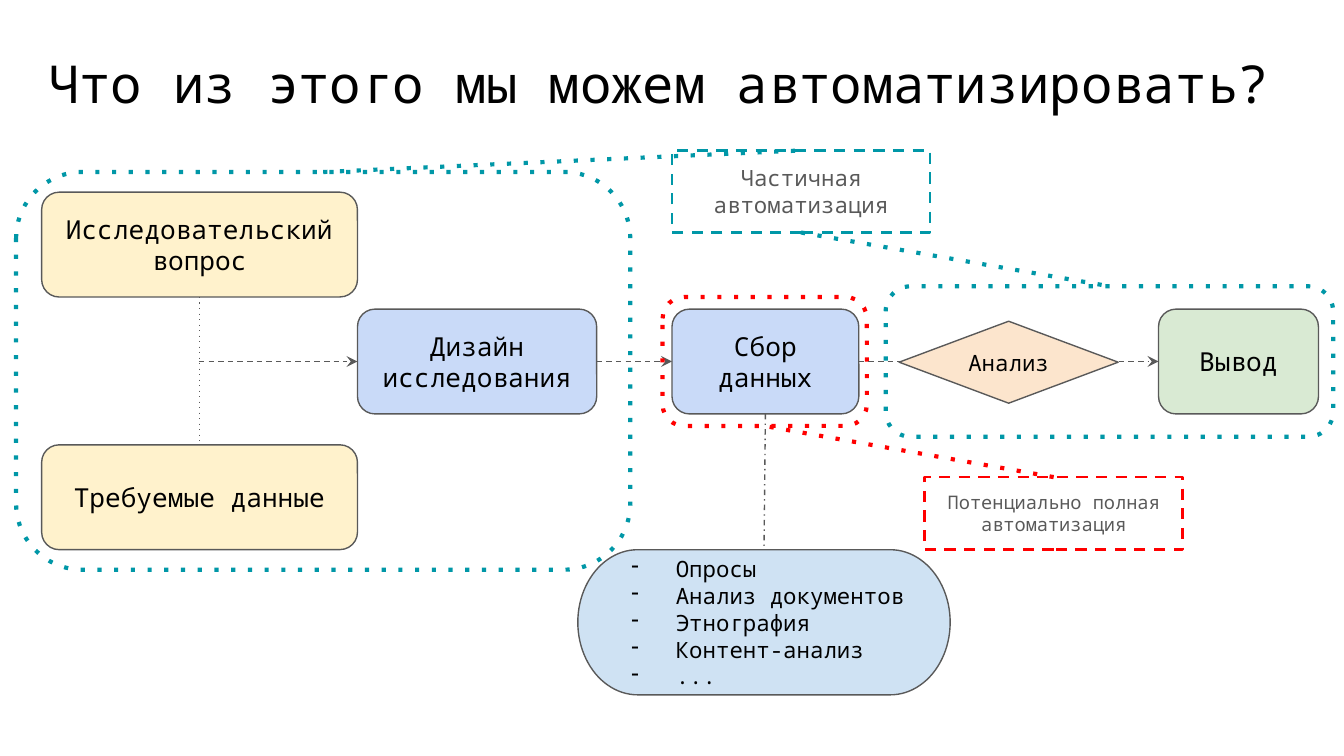
from lxml import etree
from pptx import Presentation
from pptx.dml.color import RGBColor
from pptx.enum.shapes import MSO_CONNECTOR, MSO_SHAPE
from pptx.enum.text import MSO_ANCHOR, MSO_AUTO_SIZE, PP_ALIGN
from pptx.oxml.ns import qn
from pptx.util import Inches, Pt

FONT = "Noto Sans Mono"
BLACK = RGBColor(0x00, 0x00, 0x00)
GRAY = RGBColor(0x59, 0x59, 0x59)
TEAL = RGBColor(0x00, 0x97, 0xA7)
RED = RGBColor(0xFF, 0x00, 0x00)
CREAM = RGBColor(0xFF, 0xF2, 0xCC)
BLUE = RGBColor(0xC9, 0xDA, 0xF8)
SKY = RGBColor(0xCF, 0xE2, 0xF3)
PEACH = RGBColor(0xFC, 0xE5, 0xCD)
GREEN = RGBColor(0xD9, 0xEA, 0xD3)

ROUND = MSO_SHAPE.ROUNDED_RECTANGLE
RECT = MSO_SHAPE.RECTANGLE
DIAMOND = MSO_SHAPE.FLOWCHART_DECISION
PILL = MSO_SHAPE.FLOWCHART_TERMINATOR
STRAIGHT = MSO_CONNECTOR.STRAIGHT
LEFT, CENTER = PP_ALIGN.LEFT, PP_ALIGN.CENTER
TOP, MIDDLE = MSO_ANCHOR.TOP, MSO_ANCHOR.MIDDLE
GROW = MSO_AUTO_SIZE.SHAPE_TO_FIT_TEXT

NORTH, WEST, SOUTH, EAST = range(4)
TALL = 0.78


def write(shape, lines, size, color=BLACK, align=CENTER, anchor=MIDDLE):
    frame = shape.text_frame
    frame.word_wrap = True
    frame.vertical_anchor = anchor
    frame.margin_left = frame.margin_right = Inches(0.1)
    frame.margin_top = frame.margin_bottom = Inches(0.1)
    frame.text = "\n".join(lines)
    for para in frame.paragraphs:
        para.alignment = align
        para.font.name = FONT
        para.font.size = Pt(size)
        para.font.color.rgb = color


def stroke(shape, color, width, dash=None, arrow=False):
    shape.line.color.rgb = color
    shape.line.width = Pt(width)
    ln = shape.element.spPr.find(qn("a:ln"))
    if dash:
        etree.SubElement(ln, qn("a:prstDash"), val=dash)
    if arrow:
        etree.SubElement(ln, qn("a:tailEnd"), type="stealth")


def block(slide, kind, box, fill=None, color=GRAY, width=0.75, dash=None):
    shape = slide.shapes.add_shape(kind, *map(Inches, box))
    shape.shadow.inherit = False
    if fill is None:
        shape.fill.background()
    else:
        shape.fill.solid()
        shape.fill.fore_color.rgb = fill
    stroke(shape, color, width, dash)
    return shape


def node(slide, kind, box, fill, text, size=14):
    shape = block(slide, kind, box, fill)
    write(shape, [text], size)
    return shape


def link(slide, start, end, color=GRAY, width=0.75, dash="dash", arrow=False):
    line = slide.shapes.add_connector(STRAIGHT, 0, 0, 0, 0)
    if isinstance(start[0], float):
        line.begin_x, line.begin_y = map(Inches, start)
    else:
        line.begin_connect(*start)
    line.end_connect(*end)
    stroke(line, color, width, dash, arrow)
    etree.SubElement(line.element.spPr, qn("a:effectLst"))


def zone(slide, box, color):
    return block(slide, ROUND, box, None, color, 2.25, "dot")


def label(slide, box, text, size, color):
    shape = block(slide, RECT, box, None, color, 1.5, "dash")
    write(shape, [text], size, GRAY, anchor=TOP)
    shape.text_frame.auto_size = GROW
    return shape


def title(slide, box):
    text = slide.shapes.add_textbox(*map(Inches, box))
    write(text, ["Что из этого мы можем автоматизировать?"], 28, align=LEFT, anchor=TOP)
    text.text_frame.auto_size = GROW


def plan(slide, box):
    x, y, w, h = box
    ask = node(slide, ROUND, (x + 0.19, y + 0.15, 2.35, TALL), CREAM,
               "Исследовательский вопрос")
    need = node(slide, ROUND, (x + 0.19, y + 2.03, 2.35, TALL), CREAM,
                "Требуемые данные")
    design = node(slide, ROUND, (x + 2.54, y + 1.02, 1.78, TALL), BLUE,
                  "Дизайн исследования")
    link(slide, (ask, SOUTH), (need, NORTH), dash="dot")
    link(slide, (x + 1.36, y + 1.41), (design, WEST), arrow=True)
    return design, zone(slide, box, TEAL)


def collect(slide, box, design):
    x, y, w, h = box
    data = node(slide, ROUND, (x + 0.07, y + 0.09, 1.39, TALL), BLUE, "Сбор данных")
    link(slide, (design, EAST), (data, WEST), arrow=True)
    return data, zone(slide, box, RED)


def methods(slide, box, data):
    pill = block(slide, PILL, box, SKY)
    write(pill, ["Опросы", "Анализ документов", "Этнография", "Контент-анализ", "..."],
          12, align=LEFT)
    for para in pill.text_frame.paragraphs:
        props = para._p.get_or_add_pPr()
        props.set("marL", str(Inches(0.5)))
        props.set("indent", str(Inches(-0.33)))
        tint = etree.Element(qn("a:buClr"))
        etree.SubElement(tint, qn("a:srgbClr"), val=str(BLACK))
        mark = etree.Element(qn("a:buChar"), char="-")
        props.insert(0, tint)
        props.insert(1, mark)
    link(slide, (data, SOUTH), (pill, NORTH), dash="dashDot")


def result(slide, box, data):
    x, y, w, h = box
    end = node(slide, ROUND, (x + 2.03, y + 0.17, 1.19, TALL), GREEN, "Вывод")
    link(slide, (data, EAST), (end, WEST), arrow=True)
    node(slide, DIAMOND, (x + 0.1, y + 0.26, 1.63, 0.61), PEACH, "Анализ", 12)
    return zone(slide, box, TEAL)


def main():
    prs = Presentation()
    prs.slide_width = Inches(10)
    prs.slide_height = prs.slide_width * 9 // 16
    slide = prs.slides.add_slide(prs.slide_layouts[6])

    title(slide, (0.26, 0.28, 9.74, 0.67))
    design, early = plan(slide, (0.12, 1.28, 4.57, 2.96))
    data, core = collect(slide, (4.93, 2.21, 1.52, 0.96), design)
    methods(slide, (4.3, 4.09, 2.77, 1.08), data)
    late = result(slide, (6.59, 2.13, 3.33, 1.12), data)

    part = label(slide, (5, 1.12, 1.92, 0.61), "Частичная автоматизация", 12, TEAL)
    full = label(slide, (6.88, 3.55, 1.92, 0.54),
                 "Потенциально полная автоматизация", 10, RED)
    for start, end, color in (
        ((early, NORTH), (part, NORTH), TEAL),
        ((part, SOUTH), (late, NORTH), TEAL),
        ((full, NORTH), (core, SOUTH), RED),
    ):
        link(slide, start, end, color, 2.25, "dot")

    prs.save("out.pptx")


if __name__ == "__main__":
    main()
